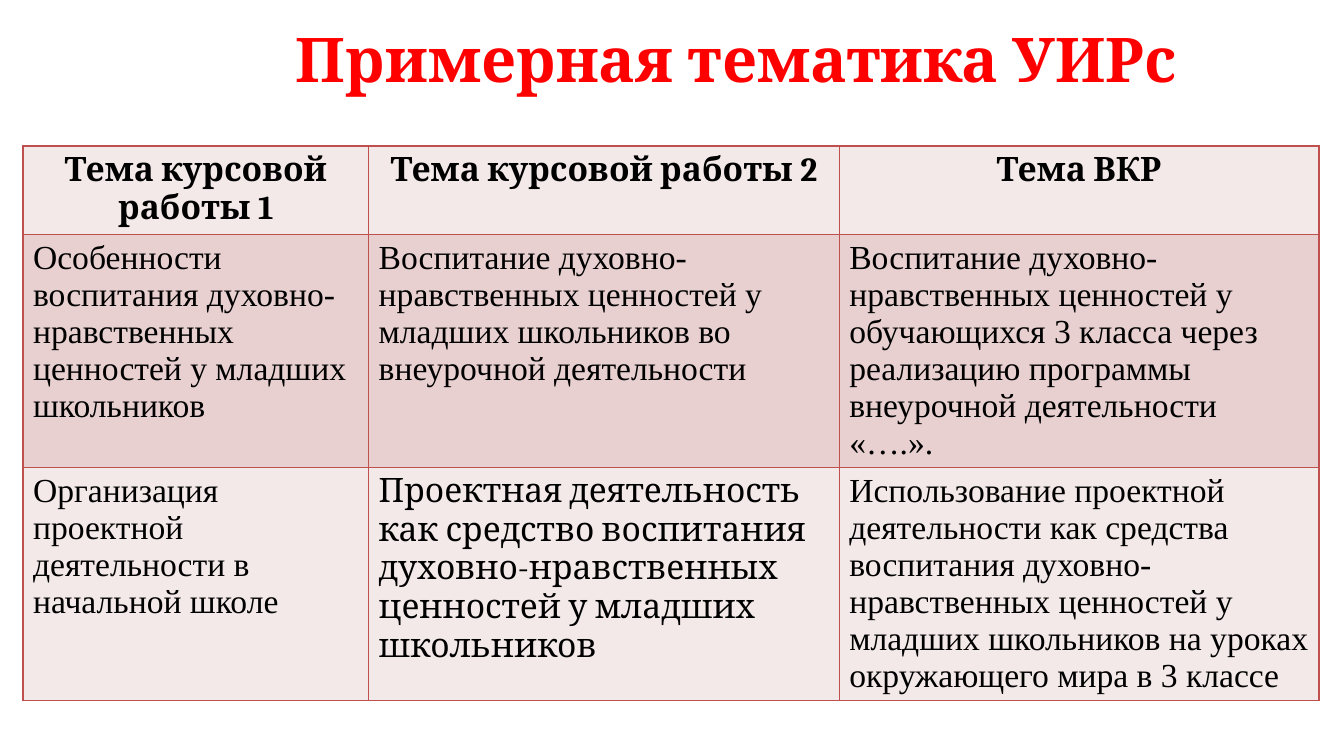
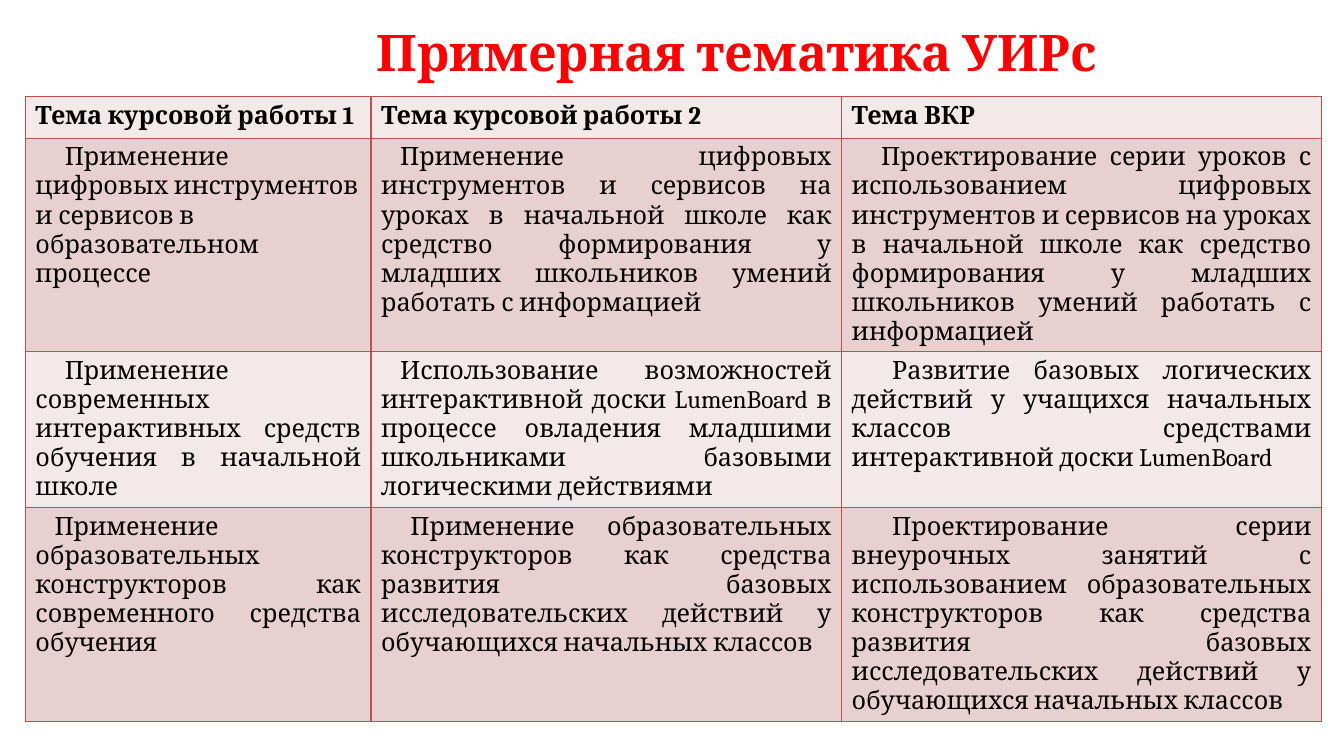
import pptx
import pptx.dml.color
import pptx.enum.text
import pptx.oxml
import pptx.oxml.ns
import pptx.util
from pptx.util import Cm

ALIGN = pptx.enum.text.PP_ALIGN
HEADING_FONT = "Cambria"
BODY_FONT = "Times New Roman"
TITLE_COLOR = "FF0000"
TEXT_COLOR = "000000"
BORDER_COLOR = "C0504D"
ROW_FILLS = ("F4E9E9", "E8D0D0")
COLUMN_WIDTHS = (8.71, 11.86, 12.09)

TITLE = "Примерная тематика УИРс"
HEADINGS = ("Тема курсовой работы 1", "Тема курсовой работы 2", "Тема ВКР")

# Each topic: text, format
VALUES_TOPICS = [
    [
        ("Особенности воспитания духовно-нравственных ценностей у младших школьников", {}),
        ("Воспитание духовно-нравственных ценностей у младших школьников "
         "во внеурочной деятельности", {}),
        ("Воспитание духовно-нравственных ценностей у обучающихся 3 класса через "
         "реализацию программы внеурочной деятельности «….».", {}),
    ],
    [
        ("Организация проектной деятельности в начальной школе", {}),
        ("Проектная деятельность как средство воспитания духовно-нравственных "
         "ценностей у младших школьников", {"font": HEADING_FONT}),
        ("Использование проектной деятельности как средства воспитания "
         "духовно-нравственных ценностей у младших школьников на уроках "
         "окружающего мира в 3 классе", {}),
    ],
]

NARROW, MEDIUM, WIDE = ({"indent": indent} for indent in (0.48, 0.74, 1.02))
DIGITAL_TOPICS = [
    [
        ("Применение цифровых инструментов и сервисов в образовательном процессе",
         {"indent": 0.74, "align": ALIGN.LEFT}),
        ("Применение цифровых инструментов и сервисов на уроках в начальной школе "
         "как средство формирования у младших школьников умений работать с "
         "информацией", NARROW),
        ("Проектирование серии уроков с использованием цифровых инструментов и "
         "сервисов на уроках в начальной школе как средство формирования у младших "
         "школьников умений работать с информацией", MEDIUM),
    ],
    [
        ("Применение современных интерактивных средств обучения в начальной школе",
         MEDIUM),
        ("Использование возможностей интерактивной доски LumenBoard в процессе "
         "овладения младшими школьниками базовыми логическими действиями", NARROW),
        ("Развитие базовых логических действий у учащихся начальных классов "
         "средствами интерактивной доски LumenBoard", WIDE),
    ],
    [
        ("Применение образовательных конструкторов как современного средства обучения",
         NARROW),
        ("Применение образовательных конструкторов как средства развития базовых "
         "исследовательских действий у обучающихся начальных классов", MEDIUM),
        ("Проектирование серии внеурочных занятий с использованием образовательных "
         "конструкторов как средства развития базовых исследовательских действий у "
         "обучающихся начальных классов", WIDE),
    ],
]


def rgb(value):
    return pptx.dml.color.RGBColor.from_string(value)


def write(frame, text, size, font=HEADING_FONT, color=TEXT_COLOR, bold=False,
          align=ALIGN.LEFT, indent=0):
    paragraph = frame.paragraphs[0]
    paragraph.alignment = align
    if indent:
        properties = paragraph._p.get_or_add_pPr()
        properties.set("marL", "0")
        properties.set("indent", str(Cm(indent)))
    run = paragraph.add_run()
    run.text = text
    run.font.size = pptx.util.Pt(size)
    run.font.name = font
    run.font.bold = bold
    run.font.color.rgb = rgb(color)


def set_borders(cell, color=BORDER_COLOR, width=1):
    properties = cell._tc.get_or_add_tcPr()
    for side in "LRTB":
        properties.append(pptx.oxml.parse_xml(
            f'<a:ln{side} {pptx.oxml.ns.nsdecls("a")} w="{pptx.util.Pt(width)}">'
            f'<a:solidFill><a:srgbClr val="{color}"/></a:solidFill></a:ln{side}>'))


def add_titled_slide(deck, title_height, title_size):
    slide = deck.slides.add_slide(deck.slide_layouts[5])
    title = slide.shapes.title
    title.left, title.top = Cm(4.95), Cm(0.33)
    title.width, title.height = Cm(27.25), Cm(title_height)
    frame = title.text_frame
    frame.auto_size = pptx.enum.text.MSO_AUTO_SIZE.NONE
    frame.vertical_anchor = pptx.enum.text.MSO_ANCHOR.MIDDLE
    write(frame, TITLE, title_size, color=TITLE_COLOR, bold=True, align=ALIGN.CENTER)
    return slide


def add_topics_table(slide, left, top, row_heights, topics, size, heading_align,
                     body_format):
    """Add a heading row and topic rows; a topic's format overrides body_format."""
    table = slide.shapes.add_table(
        len(row_heights), len(COLUMN_WIDTHS), Cm(left), Cm(top),
        Cm(sum(COLUMN_WIDTHS)), Cm(sum(row_heights))).table
    table.first_row = table.horz_banding = False
    for column, width in zip(table.columns, COLUMN_WIDTHS):
        column.width = Cm(width)
    for row, height in zip(table.rows, row_heights):
        row.height = Cm(height)

    heading_format = {"bold": True, "align": heading_align}
    headings = [(heading, heading_format) for heading in HEADINGS]
    body = [[(text, {**body_format, **own_format}) for text, own_format in row]
            for row in topics]
    for row_index, contents in enumerate([headings] + body):
        for column_index, (text, text_format) in enumerate(contents):
            cell = table.cell(row_index, column_index)
            set_borders(cell)
            cell.fill.solid()
            cell.fill.fore_color.rgb = rgb(ROW_FILLS[row_index % 2])
            write(cell.text_frame, text, size, **text_format)


def main():
    deck = pptx.Presentation()
    deck.slide_width, deck.slide_height = Cm(33.87), Cm(19.05)

    values_slide = add_titled_slide(deck, title_height=2.24, title_size=44)
    add_topics_table(values_slide, 0.58, 3.68, (2.22, 5.87, 5.87), VALUES_TOPICS,
                     size=24, heading_align=ALIGN.CENTER,
                     body_format={"font": BODY_FONT})

    digital_slide = add_titled_slide(deck, title_height=1.93, title_size=36)
    add_topics_table(digital_slide, 0.64, 2.44, (1.04, 5.38, 3.92, 5.38),
                     DIGITAL_TOPICS, size=18, heading_align=ALIGN.LEFT,
                     body_format={"align": ALIGN.JUSTIFY})

    deck.save("out.pptx")


if __name__ == "__main__":
    main()
